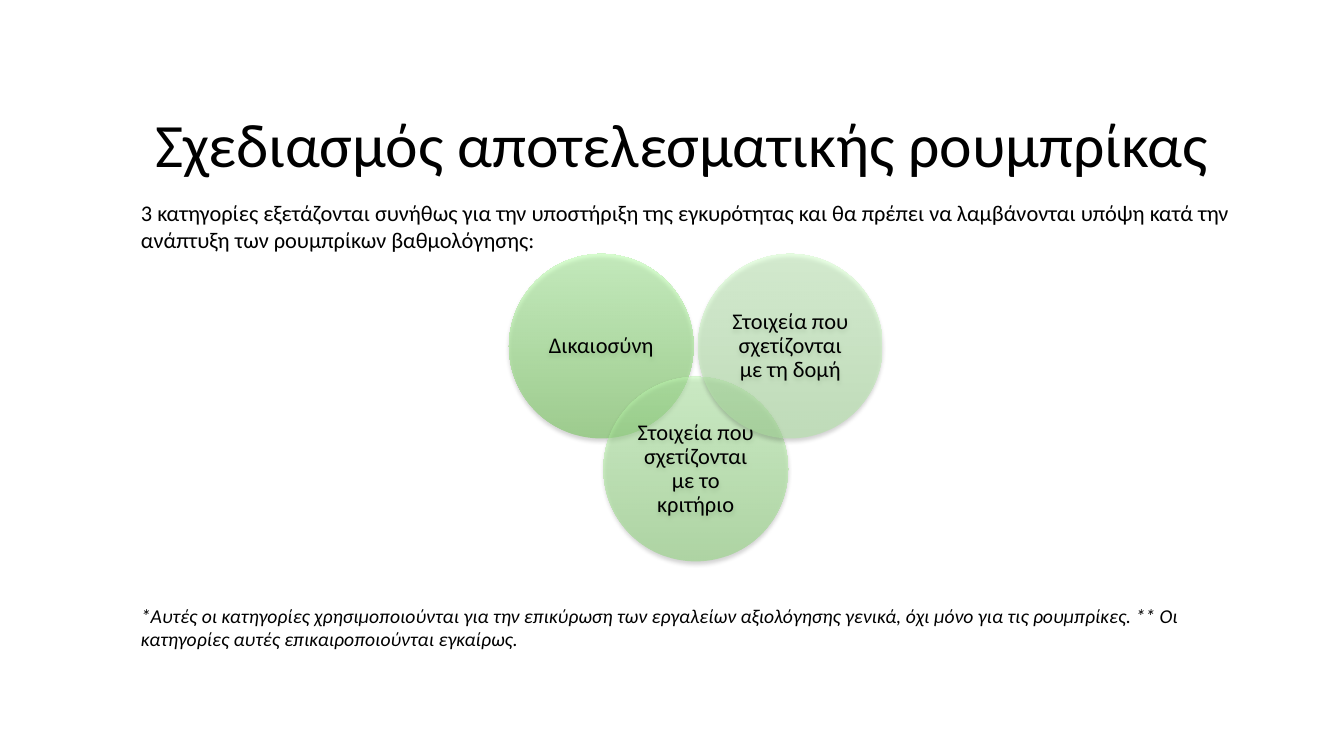
from lxml.etree import SubElement
from pptx import Presentation
from pptx.dml.color import RGBColor
from pptx.enum.shapes import MSO_SHAPE
from pptx.enum.text import MSO_ANCHOR, MSO_AUTO_SIZE, PP_ALIGN
from pptx.oxml.ns import qn
from pptx.util import Pt

# Content
TITLE = "Σχεδιασμός αποτελεσματικής ρουμπρίκας"
INTRO = ("3 κατηγορίες εξετάζονται συνήθως για την υποστήριξη της εγκυρότητας και θα πρέπει "
         "να λαμβάνονται υπόψη κατά την ανάπτυξη των ρουμπρίκων βαθμολόγησης:")
FOOTNOTE = ("*Αυτές οι κατηγορίες χρησιμοποιούνται για την επικύρωση των εργαλείων αξιολόγησης "
            "γενικά, όχι μόνο για τις ρουμπρίκες. ** Οι κατηγορίες αυτές επικαιροποιούνται εγκαίρως.")
# Label, column, row, bottom colour, top colour
CATEGORIES = [
    ("Δικαιοσύνη", 0, 0, "69C54B", "B4FFA4"),
    ("Στοιχεία που σχετίζονται με το κριτήριο", 1, 1, "8AD575", "C2FFB4"),
    ("Στοιχεία που σχετίζονται με τη δομή", 2, 0, "ADE4A0", "D2FFC9"),
]

# Layout in points
TEXT_LEFT, TEXT_WIDTH = 93.6, 807.8
CIRCLES_LEFT, CIRCLES_TOP, DIAMETER = 363.6, 181.4, 131.8
COLUMN_STEP, ROW_STEP = 67.5, 87.8
CIRCLE_INSET = 5


def color(value):
    return RGBColor.from_string(value)


def write(text_frame, text, size, alignment=PP_ALIGN.LEFT, spacing=None, italic=False):
    text_frame.word_wrap = True
    text_frame.text = text
    paragraph = text_frame.paragraphs[0]
    paragraph.alignment = alignment
    paragraph.line_spacing = spacing
    font = paragraph.runs[0].font
    font.name, font.size, font.italic = "Calibri", Pt(size), italic
    font.color.rgb = color("000000")


def add_text(slide, text, top, height, size, italic=False):
    box = slide.shapes.add_textbox(Pt(TEXT_LEFT), Pt(top), Pt(TEXT_WIDTH), Pt(height))
    write(box.text_frame, text, size, italic=italic)


def fill_gradient(shape, colors):
    shape.fill.gradient()
    shape.fill.gradient_angle = 90
    for stop, value in zip(shape.fill.gradient_stops, colors):
        stop.color.rgb = color(value)
    for element in shape.fill._xPr.iter(qn("a:srgbClr")):
        SubElement(element, qn("a:alpha"), val="50000")


def add_shadow(shape):
    shape.shadow.inherit = False
    effects = shape._element.spPr.find(qn("a:effectLst"))
    shadow = SubElement(effects, qn("a:outerShdw"), blurRad="40000", dist="23000",
                        dir="5400000", rotWithShape="0")
    black = SubElement(shadow, qn("a:srgbClr"), val="000000")
    SubElement(black, qn("a:alpha"), val="35000")


def add_circle(slide, label, column, row, colors):
    circle = slide.shapes.add_shape(
        MSO_SHAPE.OVAL, Pt(CIRCLES_LEFT + column * COLUMN_STEP),
        Pt(CIRCLES_TOP + row * ROW_STEP), Pt(DIAMETER), Pt(DIAMETER))
    fill_gradient(circle, colors)
    circle.line.fill.background()
    add_shadow(circle)
    frame = circle.text_frame
    frame.margin_left = frame.margin_right = Pt(CIRCLE_INSET)
    frame.margin_top = frame.margin_bottom = Pt(CIRCLE_INSET)
    frame.vertical_anchor = MSO_ANCHOR.MIDDLE
    write(frame, label, 16, PP_ALIGN.CENTER, 0.9)


def main():
    presentation = Presentation()
    presentation.slide_width, presentation.slide_height = Pt(960), Pt(540)
    slide = presentation.slides.add_slide(presentation.slide_layouts[5])

    # Title
    title = slide.shapes.title
    title.left, title.top, title.width, title.height = Pt(73.4), Pt(56.9), Pt(828), Pt(97.2)
    title.text_frame.auto_size = MSO_AUTO_SIZE.NONE
    title.text_frame.vertical_anchor = MSO_ANCHOR.MIDDLE
    write(title.text_frame, TITLE, 44, PP_ALIGN.CENTER, 0.9)

    # Introduction, overlapping circles and footnote
    add_text(slide, INTRO, 139, 46, 16)
    for label, column, row, *colors in CATEGORIES:
        add_circle(slide, label, column, row, colors)
    add_text(slide, FOOTNOTE, 427.7, 41, 14, italic=True)

    presentation.save("out.pptx")


if __name__ == "__main__":
    main()
